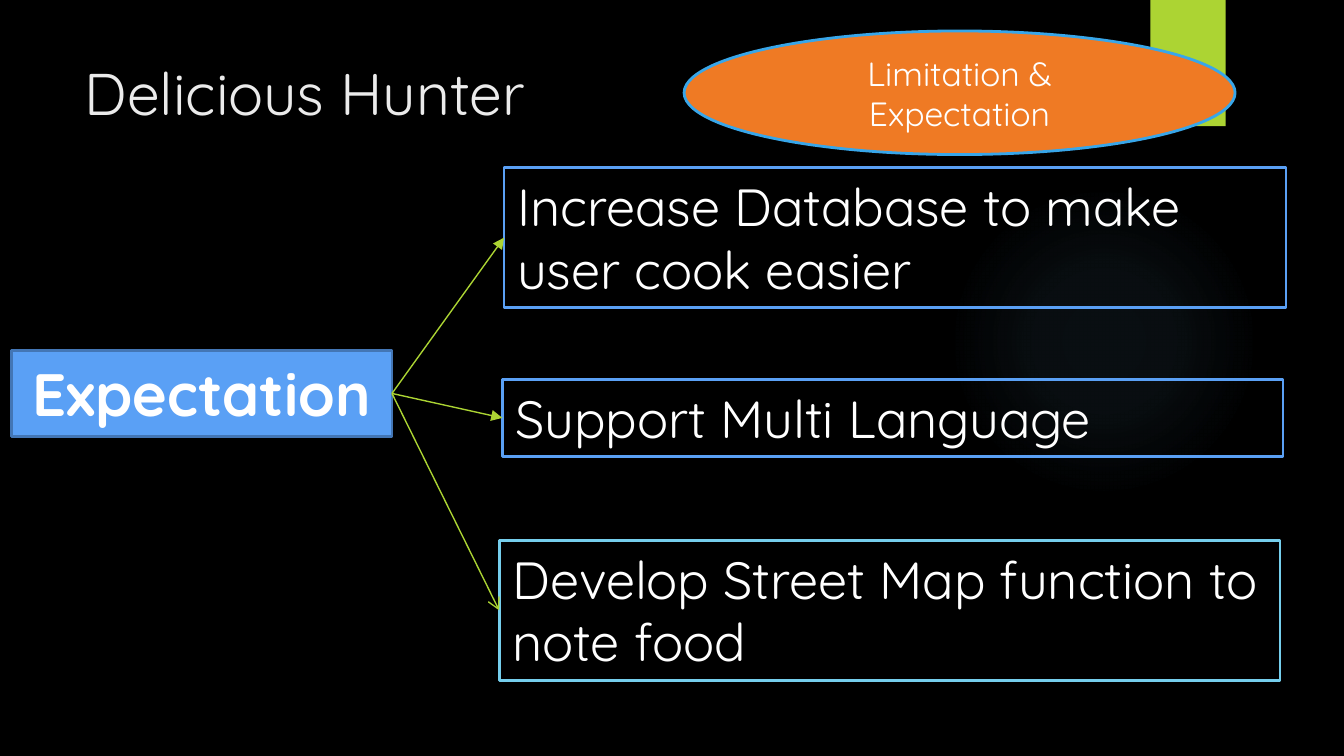
from lxml.etree import SubElement
from pptx import Presentation
from pptx.dml.color import RGBColor
from pptx.enum.shapes import MSO_CONNECTOR, MSO_SHAPE
from pptx.enum.text import MSO_ANCHOR, MSO_AUTO_SIZE, PP_ALIGN
from pptx.oxml.ns import qn
from pptx.util import Pt

# Content: places are left, top, width, height in points
TITLE = ("Delicious Hunter", (38.2, 26.6, 555, 82.8))
TOPIC = ("Limitation & Expectation", (366.5, 16.6, 295.2, 66.2))
ROOT = ("Expectation", (6, 187.7, 204, 46.2))
GOALS = [  # text, place, outline, arrowhead
    ("Increase Database to make user cook easier", (270, 89.8, 419, 75.1), "5AA0F5", "triangle"),
    ("Support Multi Language", (269.1, 203.2, 418.3, 41.4), "5AA0F5", "triangle"),
    ("Develop Street Map function to note food", (267.4, 289.4, 418.3, 75.1), "75CEEC", "arrow"),
]
TAB = (616.3, 0, 40.3, 67.7)
GLOW = (508.3, 99.4, 166.3, 166.3)
GLOW_STOPS = [(0, 7), (36, 6), (69, 0)]  # position and opacity, percent
FONT, GREEN, WHITE = "Quicksand", "ACD433", "FFFFFF"


def color(value):
    return RGBColor.from_string(value)


def add_box(kind, place, fill=None, line=None):
    sp = s.shapes.add_shape(kind, *map(Pt, place))
    sp.shadow.inherit = False
    if fill:
        sp.fill.solid()
        sp.fill.fore_color.rgb = color(fill)
    else:
        sp.fill.background()
    if line:
        sp.line.color.rgb = color(line)
        sp.line.width = Pt(1.5)
    else:
        sp.line.fill.background()
    return sp


def write(sp, text, size, ink=WHITE, bold=False, align=PP_ALIGN.LEFT, **frame):
    tf = sp.text_frame
    tf.text = text
    for name, value in {"word_wrap": True, **frame}.items():
        setattr(tf, name, value)
    p = tf.paragraphs[0]
    p.alignment = align
    for name, value in {"name": FONT, "size": Pt(size), "bold": bold}.items():
        setattr(p.runs[0].font, name, value)
    p.runs[0].font.color.rgb = color(ink)


def add_arrow(start, end, head):
    line = s.shapes.add_connector(MSO_CONNECTOR.STRAIGHT, 0, 0, 0, 0)
    line.begin_connect(start, 3)
    line.end_connect(end, 1)
    line.line.color.rgb = color(GREEN)
    line.line.width = Pt(0.75)
    SubElement(line.line._get_or_add_ln(), qn("a:tailEnd"), type=head)
    SubElement(line._element.spPr, qn("a:effectLst"))


prs = Presentation()
prs.slide_width, prs.slide_height = Pt(720), Pt(405)
s = prs.slides.add_slide(prs.slide_layouts[5])
s.background.fill.solid()
s.background.fill.fore_color.rgb = color("000000")

# Soft radial glow
glow = add_box(MSO_SHAPE.OVAL, GLOW)
glow.fill.gradient()
grad = glow._element.spPr.find(qn("a:gradFill"))
for child in list(grad):
    grad.remove(child)
stops = SubElement(grad, qn("a:gsLst"))
for pos, opacity in GLOW_STOPS:
    stop = SubElement(stops, qn("a:gs"), pos=str(pos * 1000))
    tint = SubElement(stop, qn("a:srgbClr"), val="7AC4F0")
    SubElement(tint, qn("a:alpha"), val=str(opacity * 1000))
circle = SubElement(grad, qn("a:path"), path="circle")
SubElement(circle, qn("a:fillToRect"), {side: "50000" for side in "ltrb"})

# Corner tab, title and topic
add_box(MSO_SHAPE.RECTANGLE, TAB, GREEN)
title = s.shapes.title
title.left, title.top, title.width, title.height = map(Pt, TITLE[1])
write(title, TITLE[0], 31.5, "EBEBEB", vertical_anchor=MSO_ANCHOR.TOP,
      auto_size=MSO_AUTO_SIZE.NONE)
topic = add_box(MSO_SHAPE.OVAL, TOPIC[1], "EF7A24", "38A6E9")
write(topic, TOPIC[0], 18, align=PP_ALIGN.CENTER, vertical_anchor=MSO_ANCHOR.MIDDLE)

# Expectation and its goals
grow = {"vertical_anchor": MSO_ANCHOR.TOP, "auto_size": MSO_AUTO_SIZE.SHAPE_TO_FIT_TEXT}
root = add_box(MSO_SHAPE.RECTANGLE, ROOT[1], "5AA0F5", "4376B5")
write(root, ROOT[0], 32, bold=True, align=PP_ALIGN.CENTER, **grow)
for text, place, outline, head in GOALS:
    goal = add_box(MSO_SHAPE.RECTANGLE, place, line=outline)
    write(goal, text, 28, **grow)
    add_arrow(root, goal, head)

prs.save("out.pptx")
